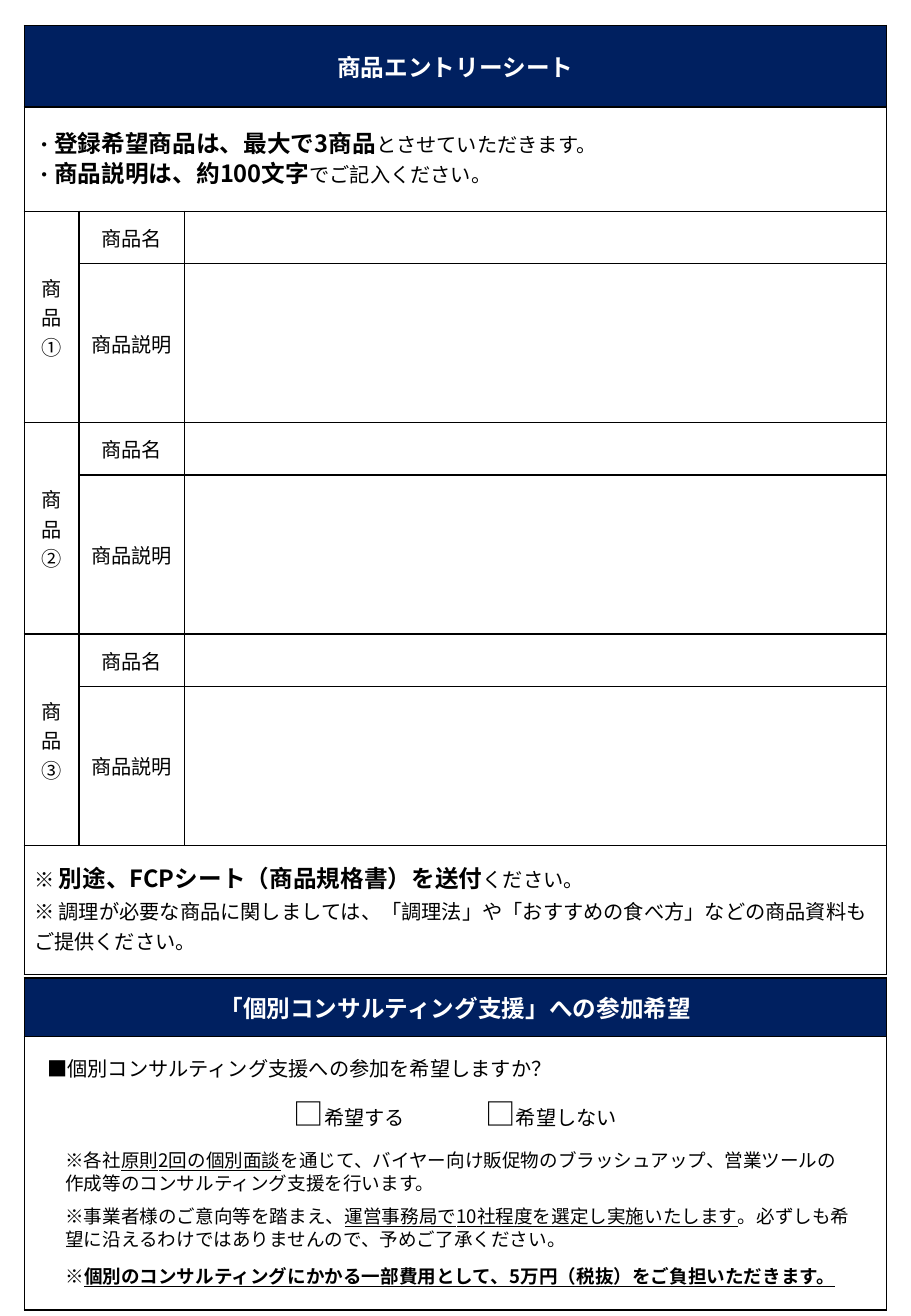
from lxml import etree
from pptx import Presentation, util as u
from pptx.dml.color import RGBColor
from pptx.enum import text as t
from pptx.oxml import ns

COLORS = {"navy": "002060", "white": "FFFFFF", "black": "000000"}
FONT = "Noto Sans CJK JP"
BODY = {"size": 12, "bold": False, "underline": False, "color": "black"}
TITLE = {"size": 14, "bold": True, "color": "white"}
STRONG = {"size": 14, "bold": True}
SMALL = {"size": 11}
SMALL_LINED = {"size": 11, "underline": True}
BOX = {"size": 18}


class EntrySheet:
    """Draws tables and text blocks on one slide in the form's style."""

    def __init__(self, presentation):
        self.slide = presentation.slides.add_slide(presentation.slide_layouts[6])

    def child(self, parent, tag, **attributes):
        return etree.SubElement(parent, ns.qn(tag), attributes)

    def run(self, paragraph, words, style):
        run = paragraph.add_run()
        run.text = words
        values = BODY | style
        color = values.pop("color")
        values |= {"size": u.Pt(values["size"]), "name": FONT}
        for name, value in values.items():
            setattr(run.font, name, value)
        run.font.color.rgb = RGBColor.from_string(COLORS[color])
        self.child(run.font._element, "a:ea", typeface=FONT)

    def fill_text(self, frame, paragraphs, align=t.PP_ALIGN.LEFT, spacing=None, tabs=()):
        for index, runs in enumerate(paragraphs):
            paragraph = frame.add_paragraph() if index else frame.paragraphs[0]
            if tabs:
                stops = self.child(paragraph._p.get_or_add_pPr(), "a:tabLst")
                for stop in tabs:
                    self.child(stops, "a:tab", pos=str(u.Inches(stop)), algn="l")
            paragraph.alignment = align
            if spacing:
                paragraph.line_spacing = u.Pt(spacing)
            for words, style in runs:
                self.run(paragraph, words, style)

    def text(self, left, top, width, height, runs, tabs=()):
        box = self.slide.shapes.add_textbox(*map(u.Inches, (left, top, width, height)))
        box.text_frame.word_wrap = True
        box.text_frame.auto_size = t.MSO_AUTO_SIZE.SHAPE_TO_FIT_TEXT
        largest = max(style.get("size", BODY["size"]) for _, style in runs)
        self.fill_text(box.text_frame, [runs], spacing=largest * 1.2, tabs=tabs)

    def table(self, left, top, columns, rows):
        size = map(u.Inches, (left, top, sum(columns), sum(rows)))
        table = self.slide.shapes.add_table(len(rows), len(columns), *size).table
        table.first_row = table.horz_banding = False
        for column, width in zip(table.columns, columns):
            column.width = u.Inches(width)
        for row, height in zip(table.rows, rows):
            row.height = u.Inches(height)
        cell_format = {
            "vertical_anchor": t.MSO_ANCHOR.MIDDLE,
            "margin_left": u.Inches(0.08), "margin_right": u.Inches(0.08),
            "margin_top": u.Inches(0.03), "margin_bottom": u.Inches(0.03),
        }
        for cell in table.iter_cells():
            for name, value in cell_format.items():
                setattr(cell, name, value)
            self.border(cell)
            cell.fill.background()
        return table

    def border(self, cell):
        for side in ("a:lnL", "a:lnR", "a:lnT", "a:lnB"):
            line = self.child(cell._tc.get_or_add_tcPr(), side, w=str(u.Pt(1)))
            fill = self.child(line, "a:solidFill")
            self.child(fill, "a:srgbClr", val=COLORS["black"])

    def label(self, cell, words, style=BODY):
        self.fill_text(cell.text_frame, [[(words, style)]], t.PP_ALIGN.CENTER)

    def heading(self, cell, words):
        cell.fill.solid()
        cell.fill.fore_color.rgb = RGBColor.from_string(COLORS["navy"])
        self.label(cell, words, TITLE)


def draw_products(sheet):
    table = sheet.table(0.2, 0.21, [0.45, 0.87, 5.78],
                        [0.67, 0.86] + [0.43, 1.31] * 3 + [1.06])
    for row in (0, 1, 8):
        table.cell(row, 0).merge(table.cell(row, 2))
    sheet.heading(table.cell(0, 0), "商品エントリーシート")
    sheet.fill_text(table.cell(1, 0).text_frame, [
        [("・", BODY), ("登録希望商品は、最大で3商品", STRONG), ("とさせていただきます。", BODY)],
        [("・", BODY), ("商品説明は、約100文字", STRONG), ("でご記入ください。", BODY)],
    ], spacing=18)
    for index, number in enumerate("①②③"):
        row = 2 + 2 * index
        table.cell(row, 0).merge(table.cell(row + 1, 0))
        sheet.label(table.cell(row, 0), "商品" + number)
        sheet.label(table.cell(row, 1), "商品名")
        sheet.label(table.cell(row + 1, 1), "商品説明")
    sheet.fill_text(table.cell(8, 0).text_frame, [
        [("※ ", {"bold": True}), ("別途、FCPシート（商品規格書）を送付", STRONG), ("ください。", BODY)],
        [("※ 調理が必要な商品に関しましては、「調理法」や「おすすめの食べ方」などの商品資料もご提供ください。", BODY)],
    ], spacing=18)


def draw_consulting(sheet):
    table = sheet.table(0.2, 8.05, [7.1], [0.48, 2.25])
    sheet.heading(table.cell(0, 0), "「個別コンサルティング支援」への参加希望")
    sheet.text(0.29, 8.64, 6.93, 0.3, [("■個別コンサルティング支援への参加を希望しますか？", BODY)])
    sheet.text(0.29, 8.96, 6.93, 0.4, [
        ("\t□", BOX), ("希望する", BODY), ("\t□", BOX), ("希望しない", BODY),
    ], tabs=(2.03, 3.61))
    notes = [
        (9.41, 0.47, [
            ("※各社", SMALL), ("原則2回の個別面談", SMALL_LINED),
            ("を通じて、バイヤー向け販促物のブラッシュアップ、営業ツールの作成等のコンサルティング支援を行います。", SMALL)]),
        (9.87, 0.47, [
            ("※事業者様のご意向等を踏まえ、", SMALL),
            ("運営事務局で10社程度を選定し実施いたします", SMALL_LINED),
            ("。必ずしも希望に沿えるわけではありませんので、予めご了承ください。", SMALL)]),
        (10.36, 0.28, [
            ("※", SMALL),
            ("個別のコンサルティングにかかる一部費用として、5万円（税抜）をご負担いただきます。",
             SMALL_LINED | {"bold": True})]),
    ]
    for top, height, runs in notes:
        sheet.text(0.44, top, 6.68, height, runs)


def main():
    presentation = Presentation()
    presentation.slide_width = u.Inches(7.5)
    presentation.slide_height = u.Inches(10.83)
    sheet = EntrySheet(presentation)
    draw_products(sheet)
    draw_consulting(sheet)
    presentation.save("out.pptx")


if __name__ == "__main__":
    main()
